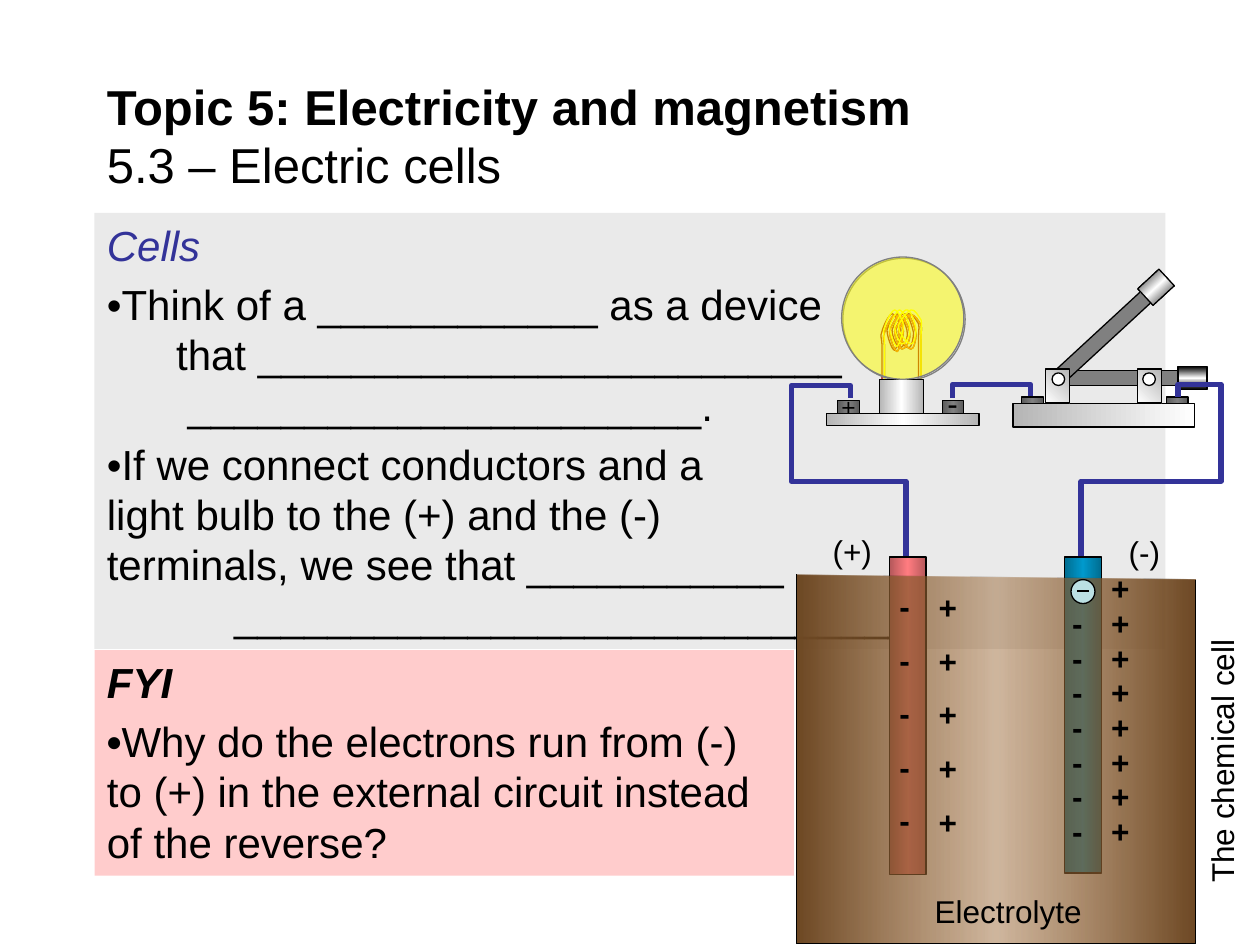
from lxml import etree
from pptx import Presentation
from pptx.dml.color import RGBColor
from pptx.enum.shapes import MSO_CONNECTOR, MSO_SHAPE
from pptx.enum.text import MSO_ANCHOR, PP_ALIGN
from pptx.oxml.ns import qn
from pptx.util import Inches, Pt

RECTANGLE, ELLIPSE = MSO_SHAPE.RECTANGLE, MSO_SHAPE.OVAL
STRAIGHT = MSO_CONNECTOR.STRAIGHT
TOP, MIDDLE = MSO_ANCHOR.TOP, MSO_ANCHOR.MIDDLE
LEFT = PP_ALIGN.LEFT

BLACK = RGBColor(0x00, 0x00, 0x00)
WHITE = RGBColor(0xFF, 0xFF, 0xFF)
GRAY = RGBColor(0x80, 0x80, 0x80)
PANEL = RGBColor(0xEA, 0xEA, 0xEA)
PINK = RGBColor(0xFF, 0xCC, 0xCC)
BLUE = RGBColor(0x33, 0x33, 0x99)
YELLOW = RGBColor(0xFF, 0xFF, 0x00)
ORANGE = RGBColor(0xFF, 0x66, 0x00)
DARK_RED = RGBColor(0x99, 0x00, 0x00)
PALE_BLUE = RGBColor(0xBB, 0xE0, 0xE3)
RED = RGBColor(0xFF, 0x7C, 0x80)
CYAN = RGBColor(0x00, 0x99, 0xCC)
BROWN = RGBColor(0x99, 0x66, 0x33)

# Gradient stops, evenly spaced: a colour and its shade in percent
KNOB = ((BLACK, 100), (WHITE, 100), (BLACK, 100))
SLOPE = ((WHITE, 46), (WHITE, 100))

# Filament: start point, then two control points and an end point per curve
FILAMENT_START = (7.02, 3.26)
FILAMENT_CURVES = [
    (7.02, 3.07, 7.02, 2.88, 7.02, 2.77), (7.02, 2.67, 7, 2.69, 7.02, 2.64),
    (7.03, 2.6, 7.07, 2.51, 7.1, 2.5), (7.12, 2.5, 7.17, 2.58, 7.17, 2.63),
    (7.17, 2.67, 7.13, 2.79, 7.12, 2.79), (7.1, 2.79, 7.06, 2.68, 7.06, 2.63),
    (7.07, 2.59, 7.12, 2.5, 7.14, 2.5), (7.17, 2.51, 7.22, 2.6, 7.22, 2.65),
    (7.23, 2.7, 7.18, 2.78, 7.16, 2.77), (7.14, 2.77, 7.1, 2.68, 7.1, 2.63),
    (7.11, 2.59, 7.17, 2.49, 7.2, 2.5), (7.23, 2.5, 7.26, 2.6, 7.27, 2.65),
    (7.27, 2.7, 7.25, 2.78, 7.23, 2.77), (7.2, 2.77, 7.13, 2.68, 7.13, 2.63),
    (7.14, 2.59, 7.2, 2.51, 7.23, 2.5), (7.26, 2.49, 7.29, 2.55, 7.31, 2.58),
    (7.32, 2.61, 7.31, 2.59, 7.31, 2.7), (7.31, 2.82, 7.31, 3.05, 7.31, 3.28),
]


def dark_edges(color):
    """Gradient stops that run from a dark shade to the colour and back."""
    return ((color, 46), (color, 100), (color, 46))


class SlideWriter:
    font = "Arial"
    thin = 0.75

    def __init__(self, slide):
        self.shapes = slide.shapes

    def set_alpha(self, color_element, percent):
        etree.SubElement(color_element, qn("a:alpha"), val=str(percent * 1000))

    def paint(self, shape, fill, line, width, angle=0):
        """Fill with nothing, one colour, or a tuple of gradient stops."""
        shape.shadow.inherit = False
        if fill is None:
            shape.fill.background()
        elif isinstance(fill, RGBColor):
            shape.fill.solid()
            shape.fill.fore_color.rgb = fill
        else:
            shape.fill.gradient()
            gradient = shape._element.spPr.find(qn("a:gradFill"))
            stops = gradient.find(qn("a:gsLst"))
            stops.clear()
            for index, (color, shade) in enumerate(fill):
                position = 100000 * index // (len(fill) - 1)
                stop = etree.SubElement(stops, qn("a:gs"), pos=str(position))
                element = etree.SubElement(stop, qn("a:srgbClr"), val=str(color))
                if shade < 100:
                    etree.SubElement(element, qn("a:shade"), val=str(shade * 1000))
            gradient.find(qn("a:lin")).set("ang", str(angle * 60000))
        if line is None:
            shape.line.fill.background()
        else:
            shape.line.color.rgb = line
            shape.line.width = Pt(width)

    def shape(self, box, fill, line=BLACK, kind=RECTANGLE, angle=0, rotation=0):
        shape = self.shapes.add_shape(kind, *map(Inches, box))
        shape.rotation = rotation
        self.paint(shape, fill, line, self.thin, angle)
        return shape

    def outline(self, points, line=BLACK, width=thin, fill=None):
        start, *rest = [(Inches(x), Inches(y)) for x, y in points]
        builder = self.shapes.build_freeform(*start)
        builder.add_line_segments(rest, close=False)
        shape = builder.convert_to_shape()
        self.paint(shape, fill, line, width)
        return shape

    def curve(self, start, curves, line):
        """Draw an outline whose segments are Bezier curves."""
        shape = self.outline([start] + [segment[4:] for segment in curves], line)
        segments = shape._element.spPr.findall(".//" + qn("a:lnTo"))
        for segment, numbers in zip(segments, curves):
            segment.tag = qn("a:cubicBezTo")
            segment.remove(segment[0])
            for x, y in zip(numbers[::2], numbers[1::2]):
                etree.SubElement(segment, qn("a:pt"), x=str(Inches(x) - shape.left),
                                 y=str(Inches(y) - shape.top))

    def line(self, start, end, width):
        line = self.shapes.add_connector(STRAIGHT, *map(Inches, start + end))
        line.line.color.rgb = BLACK
        line.line.width = Pt(width)
        etree.SubElement(line._element.spPr, qn("a:effectLst"))

    def paragraph(self, frame, text, size, color=BLACK, bold=False, italic=False,
                  before=0, spacing=None, tabs=()):
        """Add a paragraph; a newline in the text is a line break."""
        paragraph = frame.paragraphs[0]
        if paragraph.runs:
            paragraph = frame.add_paragraph()
        paragraph.alignment = LEFT
        paragraph.space_before = Pt(before)
        paragraph.line_spacing = spacing
        if tabs:
            tab_list = etree.SubElement(paragraph._p.get_or_add_pPr(), qn("a:tabLst"))
            for tab in tabs:
                etree.SubElement(tab_list, qn("a:tab"), pos=str(Inches(tab)), algn="l")
        for index, line in enumerate(text.split("\n")):
            if index:
                paragraph.add_line_break()
            self.run(paragraph, line, size, color, bold, italic)
        return paragraph

    def run(self, paragraph, text, size, color=BLACK, bold=False, italic=False):
        run = paragraph.add_run()
        run.text = text
        font = run.font
        font.name, font.size, font.bold, font.italic = self.font, Pt(size), bold, italic
        font.color.rgb = color

    def text_box(self, box, wrap=True, anchor=TOP, rotation=0):
        shape = self.shapes.add_textbox(*map(Inches, box))
        shape.rotation = rotation
        shape.text_frame.word_wrap = wrap
        shape.text_frame.vertical_anchor = anchor
        return shape.text_frame

    def panel(self, box, fill):
        frame = self.shape(box, fill, line=None).text_frame
        frame.word_wrap = True
        frame.vertical_anchor = TOP
        return frame

    def label(self, box, text, size=18, rotation=0):
        self.paragraph(self.text_box(box, wrap=False, rotation=rotation), text, size)

    def charges(self, box, sign, count, spacing):
        frame = self.text_box(box)
        for _ in range(count):
            self.paragraph(frame, sign, 18, bold=True, before=9, spacing=spacing)


def draw_text_panels(writer):
    fyi = writer.panel((0.75, 5.16, 5.55, 1.79), PINK)
    writer.paragraph(fyi, "FYI", 24, bold=True, italic=True, before=5)
    question = writer.paragraph(fyi, "•", 24, bold=True, before=5)
    writer.run(question, "Why do the electrons run from (-) to (+) in the external "
               "circuit instead of the reverse?", 24)

    cells = writer.panel((0.75, 1.69, 8.5, 3.46), PANEL)
    writer.paragraph(cells, "Cells", 24, BLUE, italic=True, before=5)
    writer.paragraph(cells, f"•Think of a {'_' * 12} as a device\n\tthat {'_' * 25}\n"
                     f"\t\t{'_' * 22}.", 24, before=5, tabs=(0.55, 0.64))
    writer.paragraph(cells, "•If we connect conductors and a\nlight bulb to the (+) and "
                     f"the (-)\nterminals, we see that {'_' * 11}\n\t{'_' * 29}.", 24,
                     before=5, tabs=(1.01,))


def draw_cell(writer):
    writer.shape((7.06, 4.42, 0.29, 2.52), dark_edges(RED))
    writer.shape((8.45, 4.42, 0.29, 2.51), dark_edges(CYAN))
    electrolyte = writer.outline([(6.32, 4.56), (6.32, 7.49), (9.49, 7.49), (9.49, 4.6)],
                                 fill=dark_edges(BROWN))
    middle_color = electrolyte._element.spPr.findall(".//" + qn("a:gs"))[1][0]
    writer.set_alpha(middle_color, 47)
    writer.charges((7.04, 4.61, 0.31, 2.21), "-", 5, 1.0)
    writer.charges((8.41, 4.6, 0.31, 2.37), "-", 8, 0.5)
    writer.charges((8.72, 4.6, 0.31, 2.37), "+", 8, 0.5)
    writer.charges((7.35, 4.62, 0.31, 2.21), "+", 5, 1.0)
    writer.label((7.32, 7.03, 1.37, 0.4), "Electrolyte")
    writer.label((8.63, 5.84, 2.13, 0.4), "The chemical cell", rotation=270)


def draw_filament_and_switch_arms(writer):
    for color, dx, dy in ((BLACK, 0, 0), (DARK_RED, -0.02, -0.01),
                          (ORANGE, 0, 0), (YELLOW, 0, -0.04)):
        start = (FILAMENT_START[0] + dx, FILAMENT_START[1] + dy)
        curves = [[number + shift for number, shift in zip(curve, (dx, dy) * 3)]
                  for curve in FILAMENT_CURVES]
        writer.curve(start, curves, color)
    for arm, knob, rotation in (((8.33, 2.94), (9.35, 2.91), 0),
                                ((8.18, 2.57), (9.06, 2.19), 317.3)):
        writer.shape((*arm, 1.24, 0.12), GRAY, rotation=rotation)
        writer.shape((*knob, 0.23, 0.18), KNOB, angle=90, rotation=rotation)
    writer.shape((6.69, 2.05, 0.97, 0.97), None, GRAY, ELLIPSE)


def draw_bases(writer):
    writer.shape((6.56, 3.28, 1.21, 0.1), dark_edges(WHITE))
    writer.shape((6.98, 3.01, 0.35, 0.27), dark_edges(WHITE))
    for left in (6.65, 7.48):
        writer.shape((left, 3.18, 0.17, 0.1), dark_edges(GRAY))
    writer.label((7.42, 3, 0.28, 0.4), "-")
    writer.label((6.58, 3.06, 0.31, 0.33), "+", 14)

    writer.shape((8.04, 3.2, 1.44, 0.19), SLOPE)
    for left in (8.11, 9.26):
        writer.shape((left, 3.15, 0.17, 0.05), dark_edges(GRAY))
    for left, hole in ((8.3, 8.35), (9.03, 9.07)):
        writer.shape((left, 2.93, 0.19, 0.27), SLOPE[::-1], angle=315)
        writer.shape((hole, 2.96, 0.1, 0.1), WHITE, kind=ELLIPSE)


def draw_wires_and_bulb(writer):
    for wire in (
        [(7.19, 4.41), (7.19, 3.82), (6.28, 3.82), (6.28, 3.06), (6.75, 3.06), (6.75, 3.16)],
        [(7.56, 3.16), (7.56, 3.05), (8.18, 3.05), (8.18, 3.14)],
        [(9.35, 3.15), (9.35, 3.05), (9.69, 3.05), (9.69, 3.82), (8.58, 3.82), (8.58, 4.41)],
    ):
        writer.outline(wire, BLUE, 3)
    bulb = writer.shape((6.68, 2.04, 0.97, 0.97), YELLOW, GRAY, ELLIPSE)
    writer.set_alpha(bulb._element.spPr.find(qn("a:solidFill"))[0], 52)
    writer.shape((8.5, 4.6, 0.19, 0.19), PALE_BLUE, kind=ELLIPSE)
    writer.line((8.55, 4.69), (8.64, 4.69), 1.5)


def main():
    presentation = Presentation()
    presentation.slide_width, presentation.slide_height = Inches(10), Inches(7.5)
    writer = SlideWriter(presentation.slides.add_slide(presentation.slide_layouts[6]))
    draw_text_panels(writer)
    draw_filament_and_switch_arms(writer)
    draw_cell(writer)
    draw_bases(writer)
    draw_wires_and_bulb(writer)
    title_frame = writer.text_box((0.75, 0.58, 8.5, 0.98), anchor=MIDDLE)
    title = writer.paragraph(title_frame, "Topic 5: Electricity and magnetism", 28, bold=True)
    title.add_line_break()
    writer.run(title, "5.3 – Electric cells", 28)
    writer.label((6.51, 4.17, 0.52, 0.4), "(+)")
    writer.label((8.86, 4.18, 0.45, 0.4), "(-)")
    presentation.save("out.pptx")


if __name__ == "__main__":
    main()
